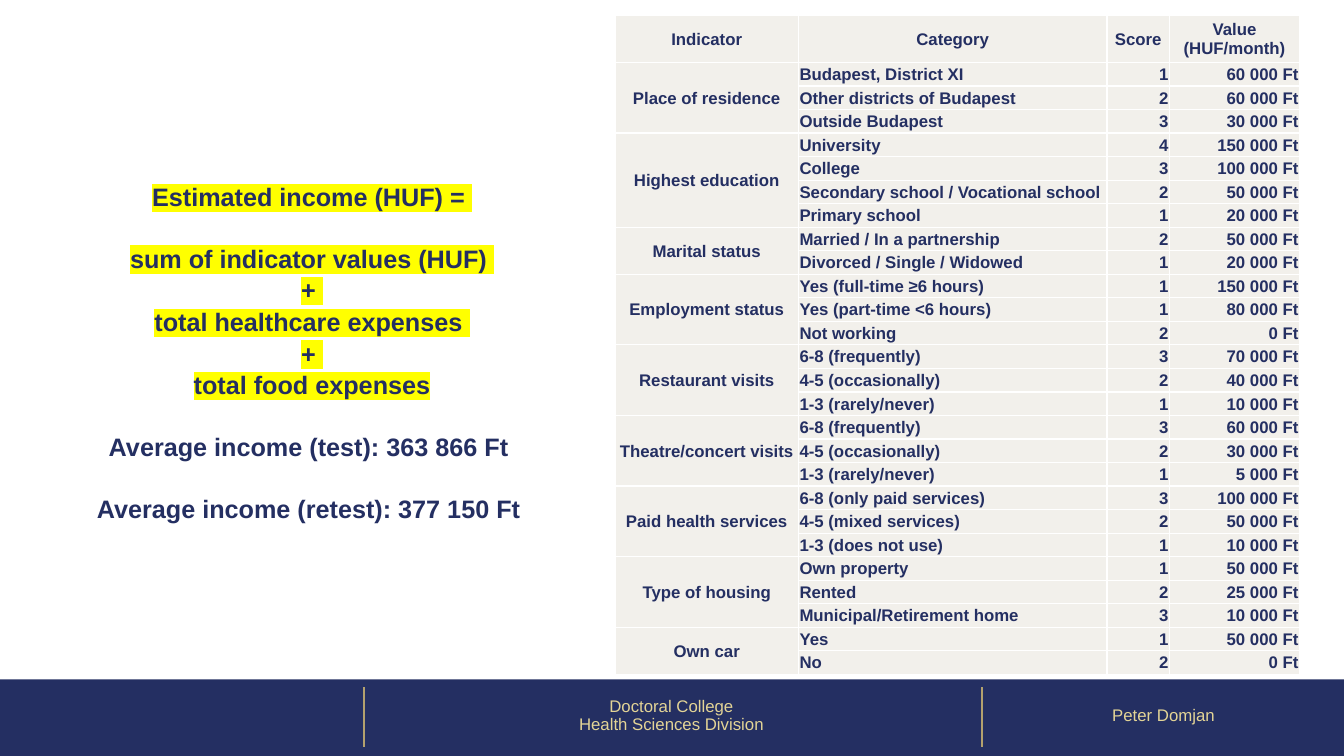
from typing import NamedTuple

from lxml import etree
from pptx import Presentation
from pptx import util as u
from pptx.dml.color import RGBColor
from pptx.enum import shapes, text
from pptx.oxml import ns

NAVY = RGBColor(0x24, 0x2F, 0x62)
GOLD = RGBColor(0xB3, 0xA1, 0x6E)
SAND = RGBColor(0xE3, 0xD4, 0x96)
CREAM = RGBColor(0xF2, 0xF0, 0xEB)
WHITE = RGBColor(0xFF, 0xFF, 0xFF)
YELLOW = RGBColor(0xFF, 0xFF, 0x00)

LEFT, MID, RIGHT = (text.PP_ALIGN.LEFT, text.PP_ALIGN.CENTER,
                    text.PP_ALIGN.RIGHT)
LINE_GAP, BLANK_GAP = 1, 22.5  # points


class Level(NamedTuple):
    label: str
    score: int
    value: str


class Group(NamedTuple):
    title: str
    levels: list[Level]


class Line(NamedTuple):
    words: str
    gap: float = LINE_GAP


class Box(NamedTuple):
    left: float
    top: float
    width: float
    height: float
    lines: list[Line]


HEADS = ["Indicator", "Category", "Score", "Value (HUF/month)"]
WIDTHS = [1.82, 3.06, 0.62, 1.29]
SIDES = [MID, LEFT, RIGHT, RIGHT]
GROUPS = [
    Group("Place of residence", [
        Level("Budapest, District XI", 1, "60 000 Ft"),
        Level("Other districts of Budapest", 2, "60 000 Ft"),
        Level("Outside Budapest", 3, "30 000 Ft")]),
    Group("Highest education", [
        Level("University", 4, "150 000 Ft"),
        Level("College", 3, "100 000 Ft"),
        Level("Secondary school / Vocational school", 2, "50 000 Ft"),
        Level("Primary school", 1, "20 000 Ft")]),
    Group("Marital status", [
        Level("Married / In a partnership", 2, "50 000 Ft"),
        Level("Divorced / Single / Widowed", 1, "20 000 Ft")]),
    Group("Employment status", [
        Level("Yes (full-time ≥6 hours)", 1, "150 000 Ft"),
        Level("Yes (part-time <6 hours)", 1, "80 000 Ft"),
        Level("Not working", 2, "0 Ft")]),
    Group("Restaurant visits", [
        Level("6-8 (frequently)", 3, "70 000 Ft"),
        Level("4-5 (occasionally)", 2, "40 000 Ft"),
        Level("1-3 (rarely/never)", 1, "10 000 Ft")]),
    Group("Theatre/concert visits", [
        Level("6-8 (frequently)", 3, "60 000 Ft"),
        Level("4-5 (occasionally)", 2, "30 000 Ft"),
        Level("1-3 (rarely/never)", 1, "5 000 Ft")]),
    Group("Paid health services", [
        Level("6-8 (only paid services)", 3, "100 000 Ft"),
        Level("4-5 (mixed services)", 2, "50 000 Ft"),
        Level("1-3 (does not use)", 1, "10 000 Ft")]),
    Group("Type of housing", [
        Level("Own property", 1, "50 000 Ft"),
        Level("Rented", 2, "25 000 Ft"),
        Level("Municipal/Retirement home", 3, "10 000 Ft")]),
    Group("Own car", [
        Level("Yes", 1, "50 000 Ft"),
        Level("No", 2, "0 Ft")]),
]

SUM = Box(1.17, 1.75, 3.85, 2.22, [
    Line("Estimated income (HUF) = "),
    Line("sum of indicator values (HUF) ", BLANK_GAP),
    Line("+ "),
    Line("total healthcare expenses "),
    Line("+ "),
    Line("total food expenses")])
MEANS = Box(0.84, 4.23, 4.51, 1.31, [
    Line("Average income (test): 363 866 Ft "),
    Line("Average income (retest): 377 150 Ft ", BLANK_GAP)])
FOOTS = [
    Box(3.59, 6.71, 6.14, 0.79, [Line("Doctoral College", 0),
                                 Line("Health Sciences Division", 0)]),
    Box(9.74, 6.71, 3.6, 0.79, [Line("Peter Domjan", 0)]),
]


def write(para, words: str, *, size: float = 12, color: RGBColor = NAVY,
          bold: bool = False, align=MID, mark: RGBColor | None = None) -> None:
    """Add one formatted run; mark is the highlight colour."""
    para.alignment = align
    run = para.add_run()
    run.text = words
    font = run.font
    font.name, font.size, font.bold = "Arial", u.Pt(size), bold
    font.color.rgb = color
    if mark is not None:
        light = etree.Element(ns.qn("a:highlight"))
        etree.SubElement(light, ns.qn("a:srgbClr"), val=str(mark))
        font.fill._xPr.find(ns.qn("a:solidFill")).addnext(light)


def add_box(slide, box: Box, *, wrap: bool = False, pitch: float | None = None,
            **style) -> None:
    shape = slide.shapes.add_textbox(*map(u.Inches, box[:4]))
    frame = shape.text_frame
    frame.word_wrap = wrap
    if wrap:
        frame.vertical_anchor = text.MSO_ANCHOR.MIDDLE
    else:
        frame.auto_size = text.MSO_AUTO_SIZE.SHAPE_TO_FIT_TEXT
    for i, line in enumerate(box.lines):
        para = frame.add_paragraph() if i else frame.paragraphs[0]
        if i:
            para.space_before = u.Pt(line.gap)
        if pitch:
            para.line_spacing = pitch
        write(para, line.words, **style)


def add_foot(slide) -> None:
    bar = slide.shapes.add_shape(
        shapes.MSO_SHAPE.RECTANGLE, 0, u.Inches(6.74),
        u.Inches(13.33), u.Inches(0.76))
    bar.shadow.inherit = False
    bar.fill.solid()
    bar.fill.fore_color.rgb = NAVY
    bar.line.fill.background()
    for x in (3.61, 9.74):
        rule = slide.shapes.add_connector(
            shapes.MSO_CONNECTOR.STRAIGHT, u.Inches(x), u.Inches(6.82),
            u.Inches(x), u.Inches(7.41))
        rule.line.color.rgb = GOLD
        rule.line.width = u.Pt(1.5)
        etree.SubElement(rule._element.spPr, ns.qn("a:effectLst"))
    for box in FOOTS:
        add_box(slide, box, wrap=True, pitch=0.9, color=SAND)


def fill_cell(cell, words: str, align) -> None:
    cell.margin_left = cell.margin_right = cell.margin_top = u.Inches(0.01)
    cell.margin_bottom = 0
    cell.vertical_anchor = text.MSO_ANCHOR.MIDDLE
    props = cell._tc.get_or_add_tcPr()
    for side in "LRTB":
        edge = etree.SubElement(props, ns.qn(f"a:ln{side}"), w=str(u.Pt(1)))
        paint = etree.SubElement(edge, ns.qn("a:solidFill"))
        etree.SubElement(paint, ns.qn("a:srgbClr"), val=str(WHITE))
    cell.fill.solid()
    cell.fill.fore_color.rgb = CREAM
    write(cell.text_frame.paragraphs[0], words, bold=True, align=align)


def add_grid(slide) -> None:
    count = sum(len(group.levels) for group in GROUPS)
    frame = slide.shapes.add_table(
        count + 1, len(HEADS), u.Inches(6.1), u.Inches(0.15),
        u.Inches(sum(WIDTHS)), u.Inches(6.55))
    grid = frame.table
    grid.first_row = grid.horz_banding = False
    for col, width in zip(grid.columns, WIDTHS):
        col.width = u.Inches(width)
    for i, row in enumerate(grid.rows):
        row.height = u.Inches(6.08 / count if i else 0.47)
    for c, head in enumerate(HEADS):
        fill_cell(grid.cell(0, c), head, MID)
    top = 1
    for group in GROUPS:
        for i, level in enumerate(group.levels):
            words = ["" if i else group.title, *map(str, level)]
            for c, (word, side) in enumerate(zip(words, SIDES)):
                fill_cell(grid.cell(top + i, c), word, side)
        end = top + len(group.levels)
        grid.cell(top, 0).merge(grid.cell(end - 1, 0))
        top = end


def main() -> None:
    deck = Presentation()
    deck.slide_width, deck.slide_height = u.Inches(13.33), u.Inches(7.5)
    slide = deck.slides.add_slide(deck.slide_layouts[6])
    add_foot(slide)
    add_grid(slide)
    add_box(slide, SUM, size=18, bold=True, mark=YELLOW)
    add_box(slide, MEANS, size=18, bold=True)
    deck.save("out.pptx")


if __name__ == "__main__":
    main()
